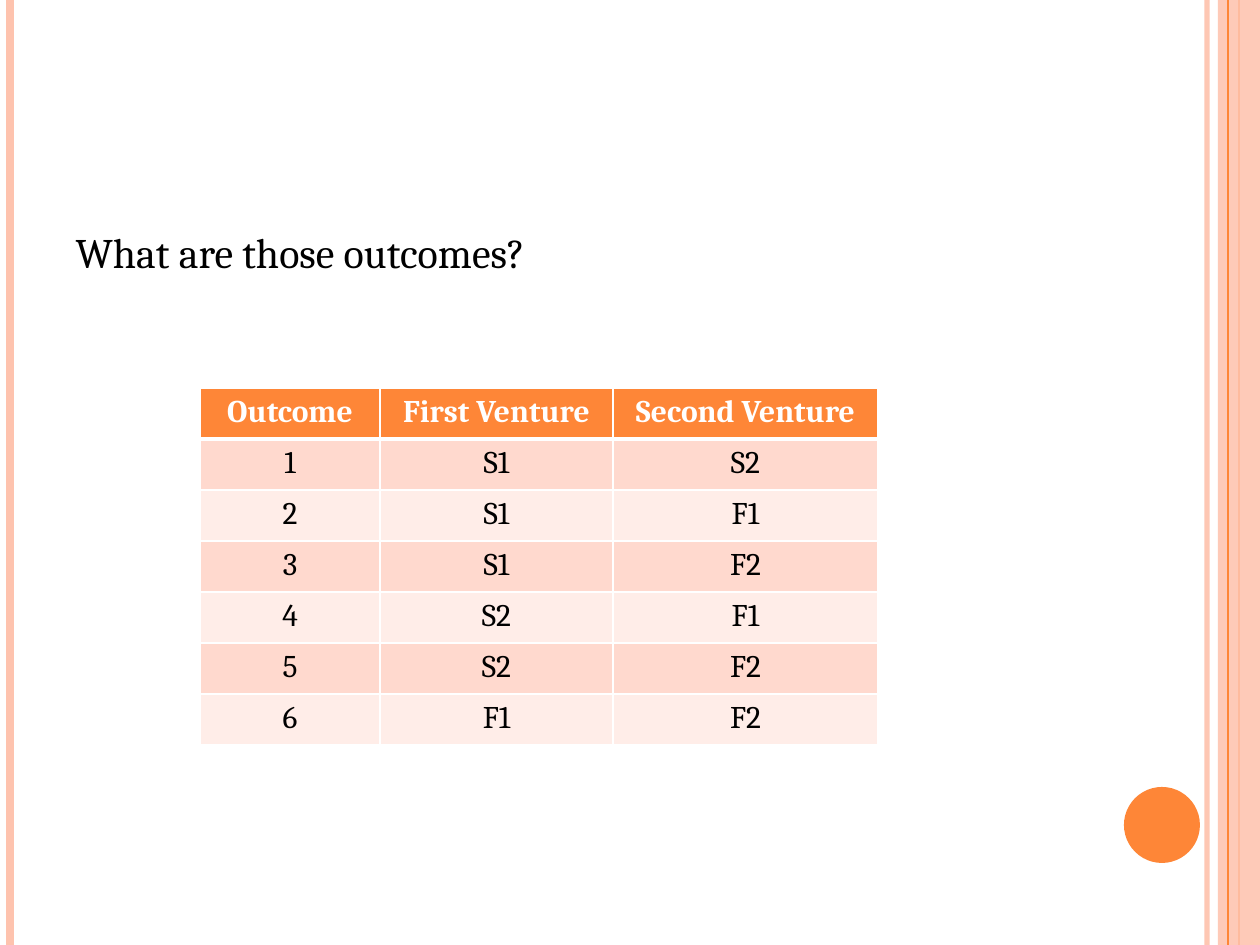
from lxml import etree
from pptx import Presentation
from pptx import util as u
from pptx.dml.color import RGBColor
from pptx.enum import shapes, text
from pptx.oxml.ns import qn

PX = 914400 / 126
WIDTH, HEIGHT = 1260, 945
FONT = "Cambria"
COLORS = {
    "accent": "FE8637",
    "stripe": "FEC3AE",
    "odd_row": "FFD9CE",
    "even_row": "FFEDE8",
    "white": "FFFFFF",
    "black": "000000",
}
COLUMN_WIDTHS = (180, 233, 265)
ROW_HEIGHT = 51
OUTCOMES = [
    ("Outcome", "First Venture", "Second Venture"),
    ("1", "S1", "S2"),
    ("2", "S1", "F1"),
    ("3", "S1", "F2"),
    ("4", "S2", "F1"),
    ("5", "S2", "F2"),
    ("6", "F1", "F2"),
]


def px(*lengths):
    return [u.Emu(round(length * PX)) for length in lengths]


def rgb(name):
    return RGBColor.from_string(COLORS[name])


def set_alpha(fill_parent, percent):
    """Make the solid fill below the given element partly transparent."""
    color = next(fill_parent.iter(qn("a:srgbClr")))
    etree.SubElement(color, qn("a:alpha"), val=str(percent * 1000))


def write(frame, words, size=18, color="black", bold=False,
          align=text.PP_ALIGN.LEFT, before=0):
    paragraph = frame.paragraphs[0]
    paragraph.alignment = align
    paragraph.space_before = u.Pt(before)
    run = paragraph.add_run()
    run.text = words
    run.font.name = FONT
    run.font.size = u.Pt(size)
    run.font.bold = bold
    run.font.color.rgb = rgb(color)


def add_vertical_line(slide, x, color, weight, alpha=100):
    line = slide.shapes.add_connector(
        shapes.MSO_CONNECTOR.STRAIGHT, *px(x, 0, x, HEIGHT))
    line.line.color.rgb = rgb(color)
    line.line.width = u.Pt(weight)
    properties = line._element.spPr
    if alpha < 100:
        set_alpha(properties, alpha)
    etree.SubElement(properties, qn("a:effectLst"))


def add_solid(slide, kind, box, color, alpha=100):
    solid = slide.shapes.add_shape(kind, *px(*box))
    solid.shadow.inherit = False
    solid.fill.solid()
    solid.fill.fore_color.rgb = rgb(color)
    solid.line.fill.background()
    if alpha < 100:
        set_alpha(solid._element.spPr, alpha)


def add_frame_stripes(slide):
    add_vertical_line(slide, 1207, "stripe", 3, alpha=93)
    add_vertical_line(slide, 10, "stripe", 4.5)
    add_vertical_line(slide, 1239, "accent", 1.5)
    add_solid(slide, shapes.MSO_SHAPE.RECTANGLE,
              (1218, 0, 42, HEIGHT), "stripe", alpha=87)
    add_vertical_line(slide, 1228, "accent", 0.75)
    add_solid(slide, shapes.MSO_SHAPE.OVAL, (1124, 787, 76, 76), "accent")


def fill_question(slide, words):
    body = slide.placeholders[1]
    body.left, body.top, body.width, body.height = px(63, 220, 1029, 84)
    frame = body.text_frame
    frame.auto_size = text.MSO_AUTO_SIZE.NONE
    frame.vertical_anchor = text.MSO_ANCHOR.TOP
    write(frame, words, size=24, before=6)
    properties = frame.paragraphs[0]._p.get_or_add_pPr()
    properties.set("marL", "0")
    properties.set("indent", "0")
    etree.SubElement(properties, qn("a:buNone"))


def set_borders(cell, **weights):
    """Draw white cell borders; weights are in points, keyed L, R, T, B."""
    properties = cell._tc.get_or_add_tcPr()
    for side, weight in weights.items():
        border = etree.SubElement(
            properties, qn(f"a:ln{side}"), w=str(u.Pt(weight)))
        fill = etree.SubElement(border, qn("a:solidFill"))
        etree.SubElement(fill, qn("a:srgbClr"), val=COLORS["white"])


def add_outcome_table(slide):
    box = px(200, 388, sum(COLUMN_WIDTHS), ROW_HEIGHT * len(OUTCOMES))
    table = slide.shapes.add_table(
        len(OUTCOMES), len(COLUMN_WIDTHS), *box).table
    for column, width in zip(table.columns, px(*COLUMN_WIDTHS)):
        column.width = width
    for row_index, outcome in enumerate(OUTCOMES):
        header = row_index == 0
        band = "odd_row" if row_index % 2 else "even_row"
        for column_index, words in enumerate(outcome):
            cell = table.cell(row_index, column_index)
            set_borders(cell, L=1, R=1, T=3 if row_index == 1 else 1,
                        B=3 if header else 1)
            cell.fill.solid()
            cell.fill.fore_color.rgb = rgb("accent" if header else band)
            write(cell.text_frame, words, bold=header,
                  color="white" if header else "black",
                  align=text.PP_ALIGN.CENTER)


def main():
    deck = Presentation()
    deck.slide_width, deck.slide_height = px(WIDTH, HEIGHT)
    slide = deck.slides.add_slide(deck.slide_layouts[1])
    title = slide.shapes.title._element
    title.getparent().remove(title)
    add_frame_stripes(slide)
    fill_question(slide, "What are those outcomes?")
    add_outcome_table(slide)
    deck.save("out.pptx")


if __name__ == "__main__":
    main()
